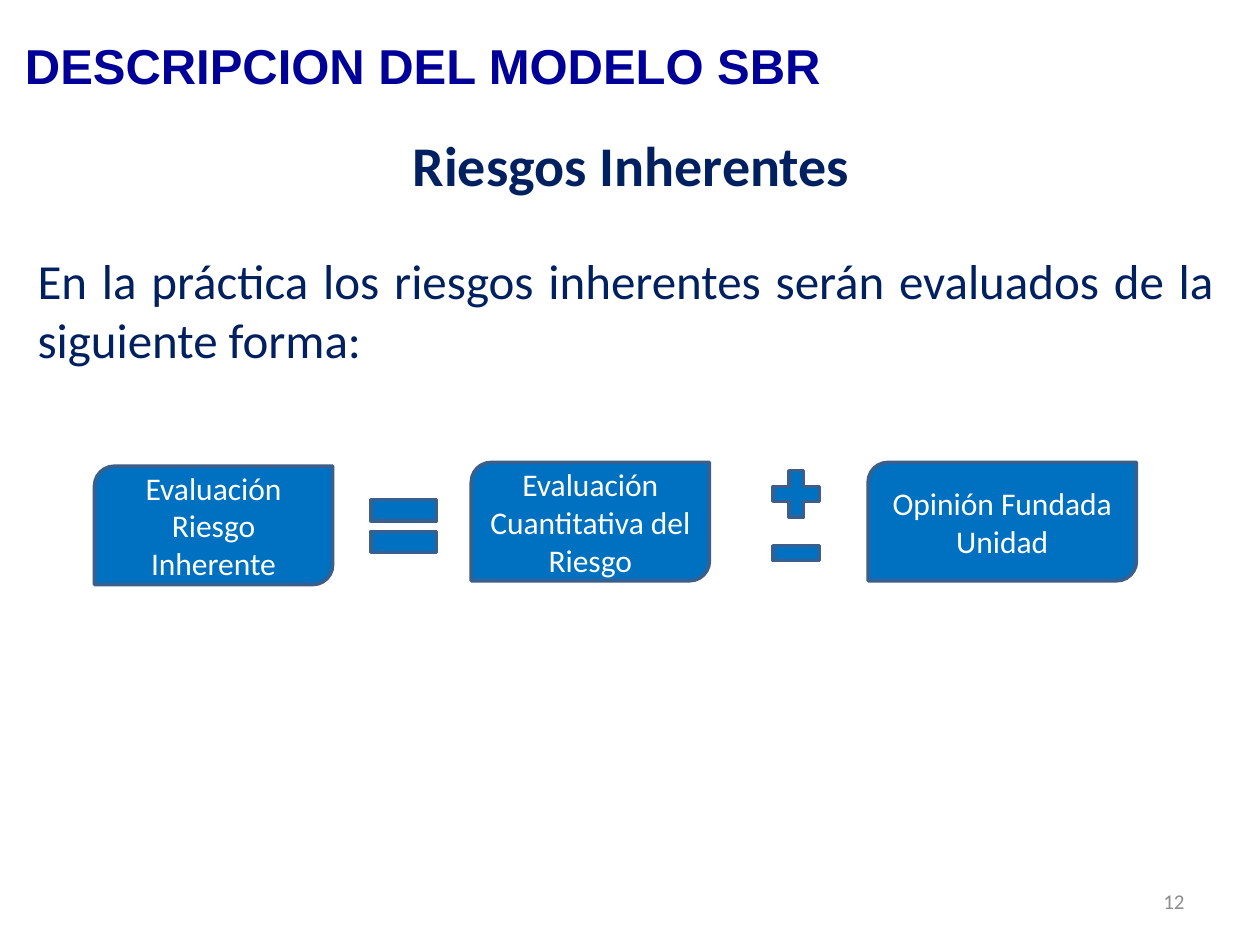
from dataclasses import dataclass

from pptx import Presentation
from pptx.dml.color import RGBColor
from pptx.enum.shapes import MSO_SHAPE
from pptx.enum.text import MSO_ANCHOR, PP_ALIGN
from pptx.shapes.autoshape import Shape
from pptx.slide import Slide
from pptx.util import Inches, Pt

LEFT, CENTER, RIGHT, JUSTIFY = (
    PP_ALIGN.LEFT, PP_ALIGN.CENTER, PP_ALIGN.RIGHT, PP_ALIGN.JUSTIFY)
TOP, MIDDLE = MSO_ANCHOR.TOP, MSO_ANCHOR.MIDDLE
TERM_BOX = MSO_SHAPE.ROUND_2_DIAG_RECTANGLE
PLUS, MINUS, EQUAL = MSO_SHAPE.MATH_PLUS, MSO_SHAPE.MATH_MINUS, MSO_SHAPE.MATH_EQUAL

COLORS = {
    "heading": "000099",
    "body": "002060",
    "fill": "0070C0",
    "outline": "3A5F8C",
    "term": "FFFFFF",
    "page": "8C8C8C",
}


@dataclass(frozen=True)
class Area:
    left: float
    top: float
    width: float
    height: float

    def lengths(self) -> list[Inches]:
        return [Inches(v) for v in (self.left, self.top, self.width, self.height)]


@dataclass(frozen=True)
class Style:
    size: int
    color: str
    align: PP_ALIGN
    bold: bool = False
    font: str = "Calibri"
    anchor: MSO_ANCHOR = MIDDLE


@dataclass(frozen=True)
class Label:
    area: Area
    text: str
    style: Style


@dataclass(frozen=True)
class FormulaPart:
    kind: MSO_SHAPE
    area: Area
    text: str = ""


TERM_STYLE = Style(18, "term", CENTER)

LABELS = [
    Label(Area(0.51, 0.68, 9, 1.25), "Riesgos Inherentes",
          Style(32, "body", CENTER, bold=True)),
    Label(Area(0.2, 1.94, 9.53, 1.18),
          "En la práctica los riesgos inherentes serán evaluados de la siguiente forma:",
          Style(28, "body", JUSTIFY, anchor=TOP)),
    Label(Area(7.17, 6.95, 2.33, 0.4), "12", Style(12, "page", RIGHT)),
    Label(Area(0.1, 0.13, 9, 0.77), "DESCRIPCION DEL MODELO SBR",
          Style(28, "heading", LEFT, bold=True, font="Arial")),
]

# Inherent risk = quantitative evaluation ± opinion
FORMULA = [
    FormulaPart(TERM_BOX, Area(0.75, 3.7, 1.89, 0.94), "Evaluación Riesgo Inherente"),
    FormulaPart(EQUAL, Area(2.85, 3.82, 0.71, 0.71)),
    FormulaPart(TERM_BOX, Area(3.74, 3.67, 1.89, 0.94),
                "Evaluación Cuantitativa del Riesgo"),
    FormulaPart(PLUS, Area(6.07, 3.67, 0.5, 0.5)),
    FormulaPart(MINUS, Area(6.07, 4.14, 0.5, 0.5)),
    FormulaPart(TERM_BOX, Area(6.89, 3.67, 2.13, 0.94), "Opinión Fundada\nUnidad"),
]


def color(name: str) -> RGBColor:
    return RGBColor.from_string(COLORS[name])


def write_text(holder: Shape, text: str, style: Style) -> None:
    frame = holder.text_frame
    frame.word_wrap = True
    frame.vertical_anchor = style.anchor
    for index, line in enumerate(text.split("\n")):
        paragraph = frame.add_paragraph() if index else frame.paragraphs[0]
        paragraph.alignment = style.align
        run = paragraph.add_run()
        run.text = line
        run.font.name = style.font
        run.font.size = Pt(style.size)
        run.font.bold = style.bold
        run.font.color.rgb = color(style.color)


def draw_label(slide: Slide, label: Label) -> None:
    box = slide.shapes.add_textbox(*label.area.lengths())
    write_text(box, label.text, label.style)


def draw_formula_part(slide: Slide, part: FormulaPart) -> None:
    shape = slide.shapes.add_shape(part.kind, *part.area.lengths())
    shape.shadow.inherit = False
    shape.fill.solid()
    shape.fill.fore_color.rgb = color("fill")
    shape.line.color.rgb = color("outline")
    shape.line.width = Pt(2)
    if part.text:
        write_text(shape, part.text, TERM_STYLE)


def main() -> None:
    prs = Presentation()
    prs.slide_width, prs.slide_height = Inches(10), Inches(7.5)
    slide = prs.slides.add_slide(prs.slide_layouts[6])

    # Headings, introduction and page number
    for label in LABELS:
        draw_label(slide, label)

    # Terms and operators of the formula
    for part in FORMULA:
        draw_formula_part(slide, part)

    prs.save("out.pptx")


if __name__ == "__main__":
    main()
